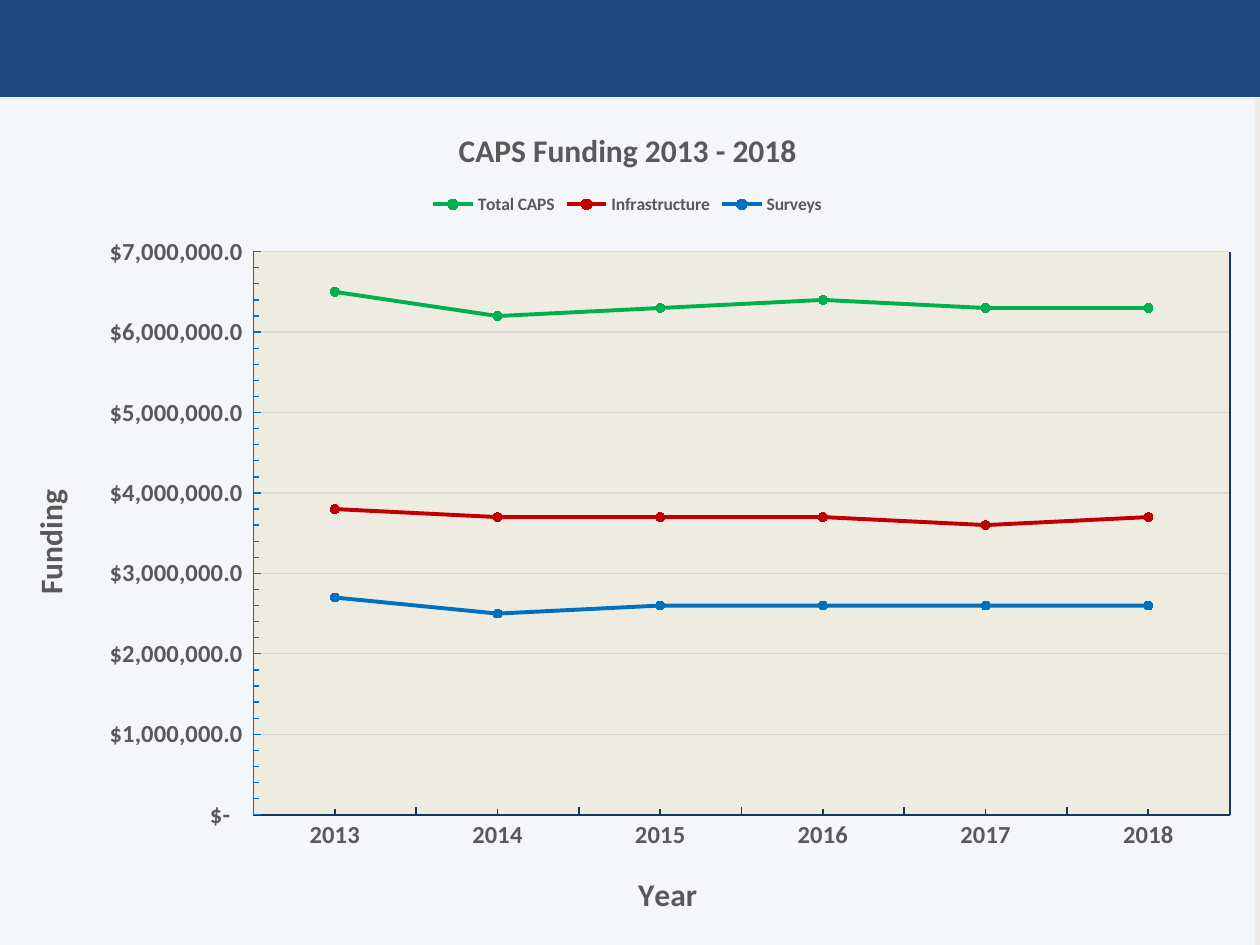
from pptx import Presentation
from pptx.chart.data import CategoryChartData
from pptx.dml.color import RGBColor
from pptx.enum.chart import (XL_CHART_TYPE, XL_LEGEND_POSITION, XL_MARKER_STYLE,
                             XL_TICK_LABEL_POSITION, XL_TICK_MARK)
from pptx.enum.shapes import MSO_CONNECTOR, MSO_SHAPE
from pptx.oxml import parse_xml
from pptx.oxml.ns import nsdecls, qn
from pptx.util import Inches, Pt

LINE_MARKERS = XL_CHART_TYPE.LINE_MARKERS
LEGEND_TOP = XL_LEGEND_POSITION.TOP
CIRCLE = XL_MARKER_STYLE.CIRCLE
LABELS_NEXT_TO_AXIS = XL_TICK_LABEL_POSITION.NEXT_TO_AXIS
TICK_INSIDE = XL_TICK_MARK.INSIDE
RECTANGLE = MSO_SHAPE.RECTANGLE
STRAIGHT = MSO_CONNECTOR.STRAIGHT

CURRENCY = '_("$"* #,##0.0_);_("$"* \\(#,##0.0\\);_("$"* "-"?_);_(@_)'
YEARS = ["2013", "2014", "2015", "2016", "2017", "2018"]
# Name, colour, funding in millions of dollars
FUNDING = [
    ("Total CAPS", "00B050", [6.5, 6.2, 6.3, 6.4, 6.3, 6.3]),
    ("Infrastructure", "C00000", [3.8, 3.7, 3.7, 3.7, 3.6, 3.7]),
    ("Surveys", "0070C0", [2.7, 2.5, 2.6, 2.6, 2.6, 2.6]),
]


def color(value):
    return RGBColor.from_string(value)


class SlideBuilder:
    font_name = "Calibri"
    text_color = "595959"
    background = "EEECE1"
    navy = "17375E"

    def __init__(self, slide):
        self.slide = slide
        fill = slide.background.fill
        fill.solid()
        fill.fore_color.rgb = color(self.background)

    def band(self, left, top, width, height, fill):
        shape = self.slide.shapes.add_shape(
            RECTANGLE, Inches(left), Inches(top), Inches(width), Inches(height))
        shape.shadow.inherit = False
        shape.fill.solid()
        shape.fill.fore_color.rgb = color(fill)
        shape.line.fill.background()

    def vertical_line(self, x, top, bottom, line_color, width):
        connector = self.slide.shapes.add_connector(
            STRAIGHT, Inches(x), Inches(top), Inches(x), Inches(bottom))
        self.style_line(connector.line, line_color, width)
        connector._element.spPr.append(parse_xml(f'<a:effectLst {nsdecls("a")}/>'))

    def line_chart(self, left, top, width, height):
        data = CategoryChartData(number_format=CURRENCY)
        data.categories = YEARS
        for name, _, millions in FUNDING:
            data.add_series(name, [round(value * 1_000_000) for value in millions])
        chart = self.slide.shapes.add_chart(
            LINE_MARKERS, Inches(left), Inches(top),
            Inches(width), Inches(height), data).chart
        self.style_font(chart.font, 10)
        for series, (_, series_color, _) in zip(chart.plots[0].series, FUNDING):
            self.style_series(series, series_color)
        chart.plots[0].vary_by_categories = False
        return chart

    def style_font(self, font, size):
        font.name = self.font_name
        font.size = Pt(size)
        font.bold = True
        font.color.rgb = color(self.text_color)

    def style_line(self, line, line_color, width):
        line.color.rgb = color(line_color)
        line.width = Pt(width)

    def style_series(self, series, series_color):
        series.smooth = False
        self.style_line(series.format.line, series_color, 2.25)
        marker = series.marker
        marker.style = CIRCLE
        marker.size = 5
        marker.format.fill.solid()
        marker.format.fill.fore_color.rgb = color(series_color)
        self.style_line(marker.format.line, series_color, 0.75)

    def title(self, title, text, x, y, rotation=0):
        title.text_frame.text = text
        self.style_font(title.text_frame.paragraphs[0].runs[0].font, 18)
        element = title._element
        element.find(".//" + qn("a:bodyPr")).set("rot", str(rotation * 60000))
        self.place(element, "c:tx", x, y)

    def axis(self, axis, line_color, width):
        axis.major_tick_mark = TICK_INSIDE
        axis.minor_tick_mark = TICK_INSIDE
        axis.tick_label_position = LABELS_NEXT_TO_AXIS
        self.style_font(axis.tick_labels.font, 14)
        self.style_line(axis.format.line, line_color, width)

    def legend(self, chart, x, y, width, height):
        chart.has_legend = True
        legend = chart.legend
        legend.position = LEGEND_TOP
        legend.include_in_layout = False
        self.style_font(legend.font, 10)
        self.place(legend._element, "c:legendPos", x, y, width, height)

    def place(self, element, after, x, y, width=None, height=None, inner=False):
        """Set a manual layout, in fractions of the chart."""
        for old in element.findall(qn("c:layout")):
            element.remove(old)
        settings = [("layoutTarget", "inner")] if inner else []
        settings += [("xMode", "edge"), ("yMode", "edge"), ("x", x), ("y", y)]
        if width:
            settings += [("w", width), ("h", height)]
        body = "".join(f'<c:{tag} val="{value}"/>' for tag, value in settings)
        layout = parse_xml(f'<c:layout {nsdecls("c")}><c:manualLayout>{body}'
                           '</c:manualLayout></c:layout>')
        if after:
            element.find(qn(after)).addnext(layout)
        else:
            element.insert(0, layout)

    def area_format(self, fill):
        return parse_xml(
            f'<c:spPr {nsdecls("c", "a")}><a:solidFill><a:srgbClr val="{fill}"/>'
            '</a:solidFill><a:ln><a:noFill/></a:ln></c:spPr>')


def main():
    deck = Presentation()
    deck.slide_width, deck.slide_height = Inches(10), Inches(7.5)
    builder = SlideBuilder(deck.slides.add_slide(deck.slide_layouts[6]))

    # Header band
    builder.band(0, 0, 10, 0.77, "1F497D")

    # Chart with its title and legend
    chart = builder.line_chart(0, 0.79, 9.96, 6.71)
    chart.has_title = True
    builder.title(chart.chart_title, "CAPS Funding 2013 - 2018", 0.361, 0.028)
    builder.legend(chart, 0.34, 0.109, 0.32, 0.03)

    # Axes
    years, dollars = chart.category_axis, chart.value_axis
    builder.axis(years, builder.navy, 1)
    builder.axis(dollars, "0070C0", 0.75)
    builder.title(years.axis_title, "Year", 0.504, 0.907)
    builder.title(dollars.axis_title, "Funding", 0.018, 0.455, rotation=-90)
    dollars.minimum_scale, dollars.maximum_scale = 0, 7_000_000
    dollars.major_unit, dollars.minor_unit = 1_000_000, 200_000
    dollars.tick_labels.number_format = CURRENCY
    dollars.tick_labels.number_format_is_linked = False
    builder.style_line(dollars.major_gridlines.format.line, "D9D9D9", 0.75)

    # Plot area and chart background
    chart_part = chart._chartSpace.find(qn("c:chart"))
    plot_area = chart_part.find(qn("c:plotArea"))
    builder.place(plot_area, None, 0.202, 0.18, 0.778, 0.666, inner=True)
    plot_area.append(builder.area_format(builder.background))
    chart_part.addnext(builder.area_format("F4F6FA"))

    # Right edge of the plot
    builder.vertical_line(9.76, 2, 6.47, builder.navy, 1)

    deck.save("out.pptx")


if __name__ == "__main__":
    main()
